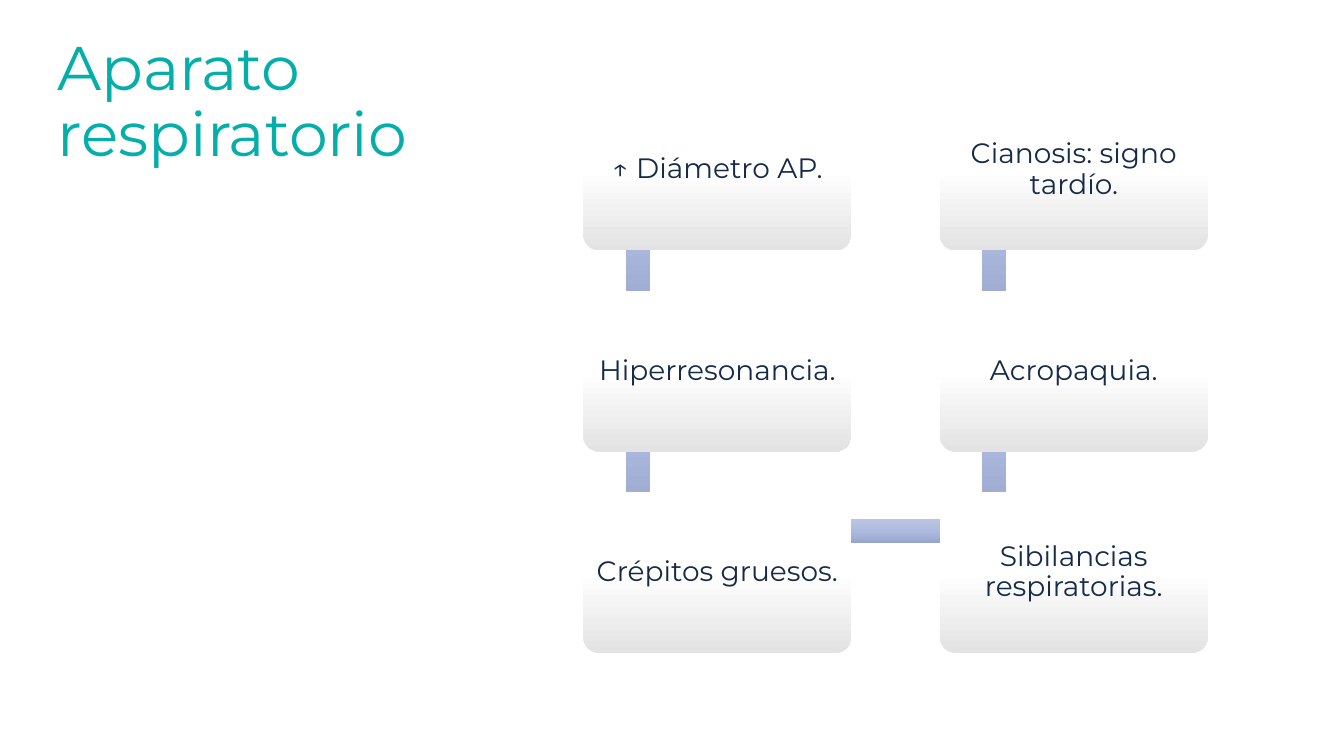
from lxml import etree
from pptx import Presentation
from pptx import util as u
from pptx.dml.color import RGBColor
from pptx.enum import shapes as sh, text as tx
from pptx.oxml.ns import qn

CARD_STOPS = [(0, "FFFFFF"), (50, "FFFFFF"), (100, "E3E3E3")]
BAR_STOPS = [(0, "BBC5E3"), (50, "AEBBE0"), (100, "98A4CB")]


def write(shape, words, size, color, align, inset):
    frame = shape.text_frame
    frame.word_wrap = True
    frame.auto_size = tx.MSO_AUTO_SIZE.NONE
    frame.vertical_anchor = tx.MSO_ANCHOR.MIDDLE
    frame.margin_left = frame.margin_right = u.Pt(inset)
    frame.text = words
    paragraph = frame.paragraphs[0]
    paragraph.alignment = align
    paragraph.line_spacing = 0.9
    font = paragraph.runs[0].font
    font.name = "Montserrat"
    font.size = u.Pt(size)
    font.color.rgb = RGBColor.from_string(color)


def block(kind, left, top, width, height, stops):
    shape = slide.shapes.add_shape(
        kind, u.Pt(left), u.Pt(top), u.Pt(width), u.Pt(height))
    shape.shadow.inherit = False
    shape.line.fill.background()
    # Three-stop vertical gradient that stays upright when the shape turns
    shape.fill.gradient()
    gradient = shape.fill._xPr.find(qn("a:gradFill"))
    gradient.set("rotWithShape", "0")
    stop_list = gradient.find(qn("a:gsLst"))
    for old_stop in list(stop_list):
        stop_list.remove(old_stop)
    for percent, color in stops:
        stop = etree.SubElement(stop_list, qn("a:gs"), pos=str(percent * 1000))
        etree.SubElement(stop, qn("a:srgbClr"), val=color)
    gradient.find(qn("a:lin")).set("ang", "5400000")
    return shape


deck = Presentation()
deck.slide_width, deck.slide_height = u.Pt(960), u.Pt(540)
slide = deck.slides.add_slide(deck.slide_layouts[5])

# Title
title = slide.shapes.title
title.left, title.top = u.Pt(33.84), u.Pt(21.6)
title.width, title.height = u.Pt(348.48), u.Pt(104.4)
write(title, "Aparato respiratorio", 44, "06AEAA", tx.PP_ALIGN.LEFT, 7.2)

# Grid of signs, one list per column
signs = [
    ["↑ Diámetro AP.", "Hiperresonancia.", "Crépitos gruesos."],
    ["Cianosis: signo tardío.", "Acropaquia.", "Sibilancias respiratorias."],
]
grid_left, grid_top = 416.7, 63.8
column_step, row_step = 254.6, 143.75
card_width, card_height = 191.5, 115
bar_length, bar_width = 143.3, 17.2

# Bars that link the cards, down the left column and up the right one
for column, turn in enumerate((90, 270)):
    for row in range(2):
        link = block(sh.MSO_SHAPE.RECTANGLE, 383.8 + column * column_step,
                     154.9 + row * row_step, bar_length, bar_width, BAR_STOPS)
        link.rotation = turn
block(sh.MSO_SHAPE.RECTANGLE, 455.8, 370.8, 254.2, bar_width, BAR_STOPS)

# Cards
for column, column_signs in enumerate(signs):
    for row, sign in enumerate(column_signs):
        card = block(sh.MSO_SHAPE.ROUNDED_RECTANGLE,
                     grid_left + column * column_step,
                     grid_top + row * row_step,
                     card_width, card_height, CARD_STOPS)
        card.adjustments[0] = 0.1
        write(card, sign, 20, "152B48", tx.PP_ALIGN.CENTER, 5.5)

deck.save("out.pptx")
